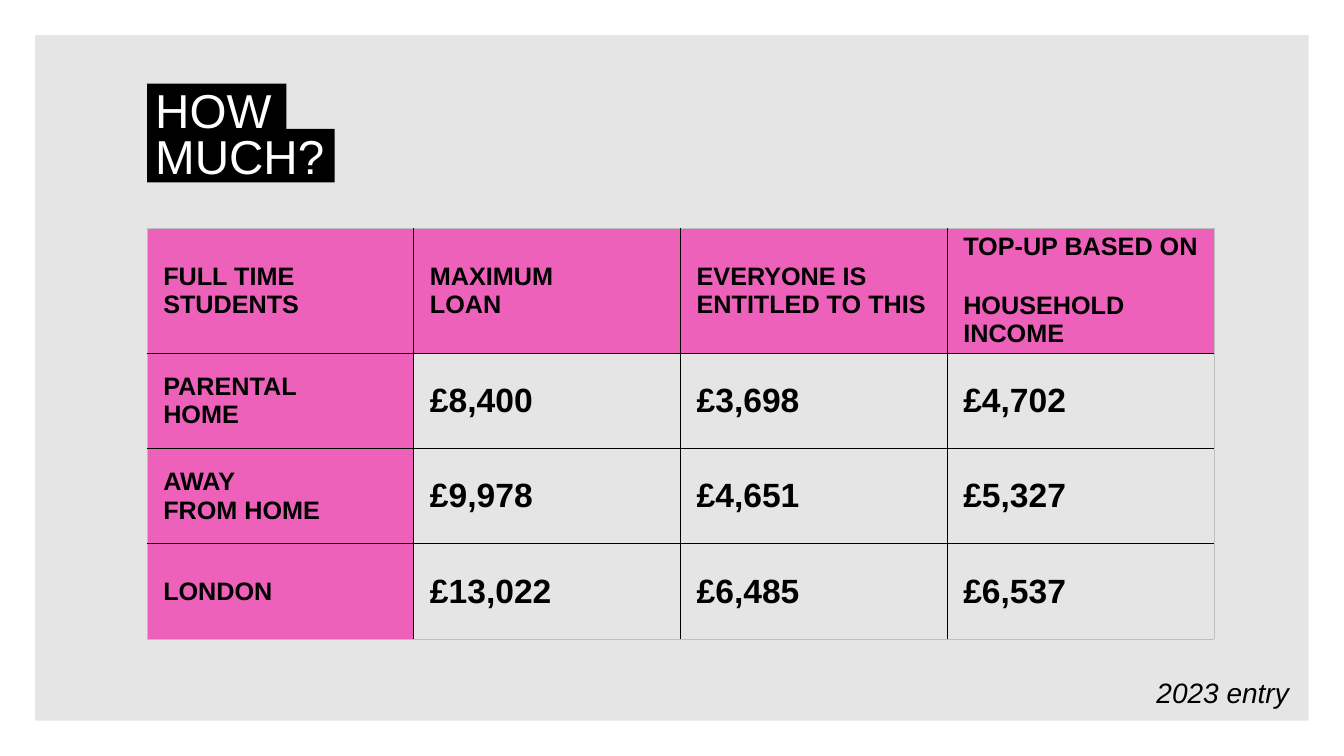
"""Build the student loan amounts slide."""
from lxml.etree import SubElement
from pptx import Presentation
from pptx.dml.color import RGBColor
from pptx.enum.shapes import MSO_SHAPE
from pptx.enum.text import MSO_ANCHOR, MSO_AUTO_SIZE, PP_ALIGN
from pptx.oxml.ns import qn
from pptx.util import Inches, Pt

TITLE = ["HOW", "MUCH?"]
ENTRY = "2023 entry"
ROWS = [
    ["FULL TIME \nSTUDENTS", "MAXIMUM \nLOAN",
     "EVERYONE IS \nENTITLED TO THIS", "TOP-UP BASED ON \nHOUSEHOLD INCOME"],
    ["PARENTAL \nHOME", "£8,400", "£3,698", "£4,702"],
    ["AWAY \nFROM HOME", "£9,978", "£4,651", "£5,327"],
    ["LONDON", "£13,022", "£6,485", "£6,537"],
]
COLOURS = {"panel": "E5E5E5", "pink": "ED61BA", "black": "000000",
           "white": "FFFFFF", "edge": "BFBFBF"}
FORMATS = {
    "title": {"size": Pt(34), "name": "Arial", "bold": False},
    "label": {"size": Pt(18), "name": "Arial", "bold": True},
    "amount": {"size": Pt(24), "name": "Arial", "bold": True},
    "entry": {"size": Pt(20), "name": "Arial", "italic": True},
}
WIDTH, HEIGHT, MARGIN = 13.33, 7.5, 0.35
LEFT, TABLE_TOP, TABLE_WIDTH, ROW_HEIGHT = 1.46, 2.26, 10.58, 0.945
TITLE_TOP, TITLE_STEP, TITLE_HEIGHT = 0.83, 0.45, 0.53
TITLE_WIDTHS = [1.38, 1.86]


def rgb(name):
    return RGBColor.from_string(COLOURS[name])


def place(sp, *box):
    sp.left, sp.top, sp.width, sp.height = map(Inches, box)


def paint(sp, colour):
    sp.fill.solid()
    sp.fill.fore_color.rgb = rgb(colour)
    sp.line.fill.background()


def write(tf, text, style, colour="black", spacing=None):
    p = tf.paragraphs[0]
    p.text = text
    p.alignment = PP_ALIGN.LEFT
    if spacing:
        p.line_spacing = spacing
    for r in p.runs:
        for key, value in FORMATS[style].items():
            setattr(r.font, key, value)
        r.font.color.rgb = rgb(colour)


def set_frame(tf, left=0, top=0):
    values = {"margin_left": Inches(left), "margin_top": Inches(top),
              "margin_right": 0, "margin_bottom": 0, "word_wrap": True,
              "auto_size": MSO_AUTO_SIZE.NONE, "vertical_anchor": MSO_ANCHOR.TOP}
    for key, value in values.items():
        setattr(tf, key, value)


def add_borders(cell, outer):
    tcPr = cell._tc.get_or_add_tcPr()
    for side in ("lnL", "lnR", "lnT", "lnB"):
        colour, width = ("edge", 0.25) if side in outer else ("black", 1)
        ln = SubElement(tcPr, qn(f"a:{side}"), w=str(Pt(width)))
        fill = SubElement(ln, qn("a:solidFill"))
        SubElement(fill, qn("a:srgbClr"), val=COLOURS[colour])


def add_title(s):
    for i, (word, width) in enumerate(zip(TITLE, TITLE_WIDTHS)):
        sp = s.shapes.title if i == 0 else s.shapes.add_shape(
            MSO_SHAPE.RECTANGLE, 0, 0, 0, 0)
        place(sp, LEFT, TITLE_TOP + i * TITLE_STEP, width, TITLE_HEIGHT)
        paint(sp, "black")
        if i:
            sp.shadow.inherit = False
        set_frame(sp.text_frame, 0.08, 0.04)
        write(sp.text_frame, word, "title", "white", 0.9)


def add_loans(s):
    n, m = len(ROWS), len(ROWS[0])
    frame = s.shapes.add_table(n, m, *map(Inches, (
        LEFT, TABLE_TOP, TABLE_WIDTH, n * ROW_HEIGHT)))
    table = frame.table
    table.first_row = table.horz_banding = False
    for column in table.columns:
        column.width = Inches(TABLE_WIDTH / m)
    for i, row in enumerate(ROWS):
        table.rows[i].height = Inches(ROW_HEIGHT)
        for j, text in enumerate(row):
            cell = table.cell(i, j)
            edges = {"lnL": j == 0, "lnR": j == m - 1,
                     "lnT": i == 0, "lnB": i == n - 1}
            add_borders(cell, [side for side, on in edges.items() if on])
            heading = i == 0 or j == 0
            if heading:
                cell.fill.solid()
                cell.fill.fore_color.rgb = rgb("pink")
            else:
                cell.fill.background()
            cell.margin_left = Inches(0.16)
            cell.vertical_anchor = MSO_ANCHOR.MIDDLE
            write(cell.text_frame, text, "label" if heading else "amount")


def main():
    prs = Presentation()
    prs.slide_width, prs.slide_height = Inches(WIDTH), Inches(HEIGHT)
    s = prs.slides.add_slide(prs.slide_layouts[5])
    panel = s.shapes.add_shape(MSO_SHAPE.RECTANGLE, 0, 0, 0, 0)
    place(panel, MARGIN, MARGIN, WIDTH - 2 * MARGIN, HEIGHT - 2 * MARGIN)
    panel.shadow.inherit = False
    paint(panel, "panel")
    s.shapes.title.element.addprevious(panel.element)
    add_loans(s)
    add_title(s)
    entry = s.shapes.add_textbox(0, 0, 0, 0)
    place(entry, 11.47, 6.74, 1.86, 0.39)
    set_frame(entry.text_frame)
    write(entry.text_frame, ENTRY, "entry", spacing=0.9)
    prs.save("out.pptx")


if __name__ == "__main__":
    main()
